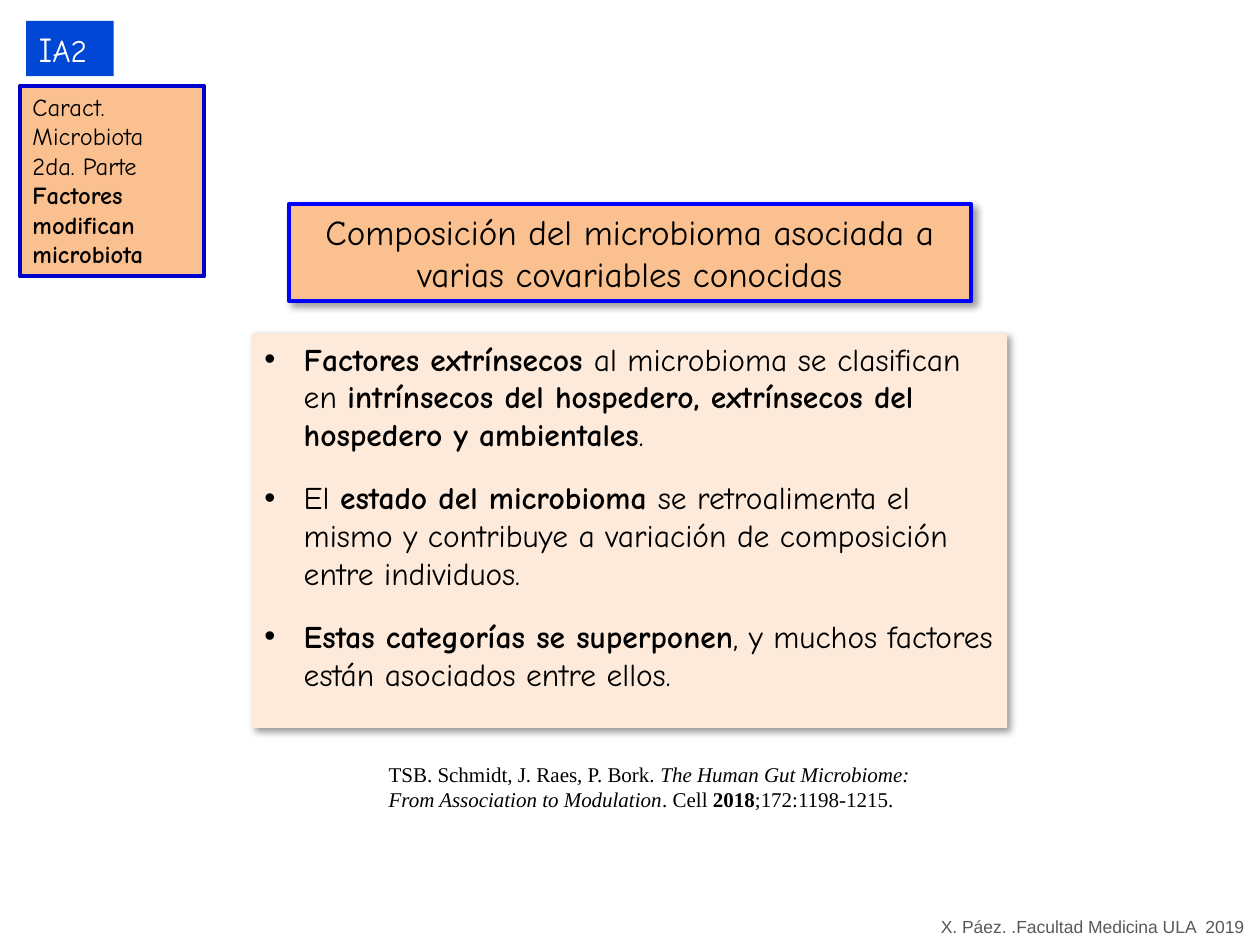
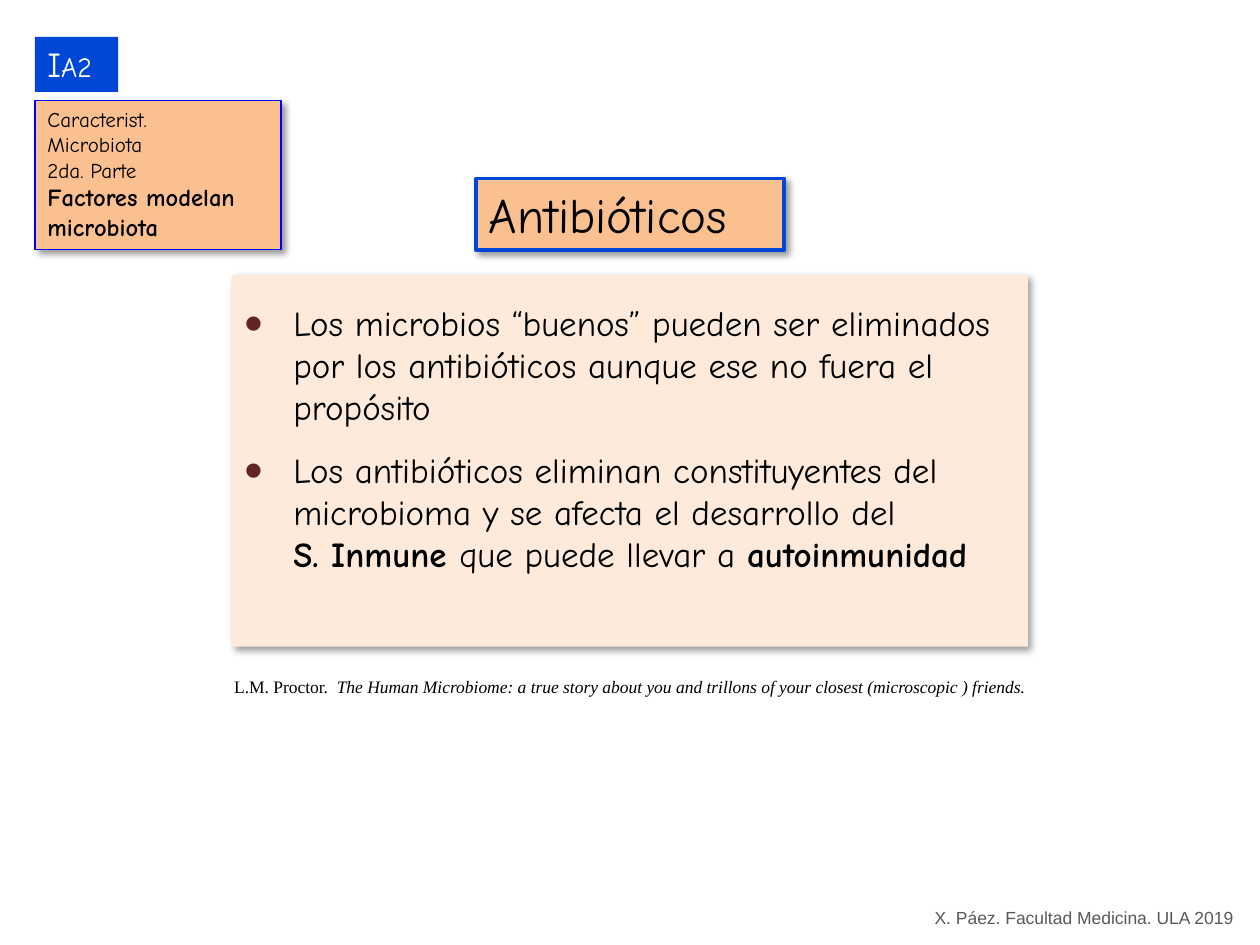
import pptx
import pptx.dml.color
import pptx.enum.shapes
import pptx.enum.text
import pptx.oxml
import pptx.oxml.ns
import pptx.util

Pt = pptx.util.Pt
ALIGN = pptx.enum.text.PP_ALIGN
ANCHOR = pptx.enum.text.MSO_ANCHOR
COLORS = {
    "black": "000000",
    "white": "FFFFFF",
    "gray": "595959",
    "peach": "FAC090",
    "cream": "FDEADA",
    "cobalt": "0047D6",
    "blue": "0000FF",
    "navy": "0000CC",
    "maroon": "632523",
}
LETTERING, CITING, FOOTING = "Comic Neue", "Times New Roman", "Arial"
BOLD = {"bold": True}
ITALIC = {"italic": True}


def rgb(name):
    return pptx.dml.color.RGBColor.from_string(COLORS[name])


def xml(markup):
    """Parse one DrawingML element, whose prefix is a."""
    tag, rest = markup[:-2].split(" ", 1)
    return pptx.oxml.parse_xml(f"{tag} {pptx.oxml.ns.nsdecls('a')} {rest}/>")


class Deck:
    """Holds the presentation, its shared style and the current slide."""

    def __init__(self):
        self.prs = pptx.Presentation()
        self.prs.slide_width, self.prs.slide_height = Pt(720), Pt(540)
        self.slide = None

    def start_slide(self):
        self.slide = self.prs.slides.add_slide(self.prs.slide_layouts[5])

    def place(self, shape, box):
        shape.left, shape.top, shape.width, shape.height = map(Pt, box)

    def decorate(self, shape, fill, line=None, weight=2.25, shadow=True):
        shape.fill.solid()
        shape.fill.fore_color.rgb = rgb(fill)
        if line:
            shape.line.color.rgb = rgb(line)
            shape.line.width = Pt(weight)
        else:
            shape.line.fill.background()
        shape.shadow.inherit = False
        if shadow:
            cast = xml(f'<a:outerShdw blurRad="{Pt(4)}" dist="{Pt(3)}" dir="2700000" '
                       'algn="tl" rotWithShape="0"/>')
            shade = xml(f'<a:srgbClr val="{COLORS["black"]}"/>')
            shade.append(xml('<a:alpha val="40000"/>'))
            cast.append(shade)
            effects = shape._element.spPr.find(pptx.oxml.ns.qn("a:effectLst"))
            effects.append(cast)

    def panel(self, box, fill, **look):
        panel = self.slide.shapes.add_shape(
            pptx.enum.shapes.MSO_SHAPE.RECTANGLE, *map(Pt, box))
        self.decorate(panel, fill, **look)
        return panel.text_frame

    def set_text(self, frame, paragraphs, size, font=LETTERING, color="black",
                 align=ALIGN.LEFT, anchor=ANCHOR.TOP, wrap=True, gap=0, bullet=None):
        """Fill a frame; a paragraph is a list of (text, font attributes) runs."""
        frame.word_wrap = wrap
        frame.auto_size = pptx.enum.text.MSO_AUTO_SIZE.NONE
        frame.vertical_anchor = anchor
        for index, runs in enumerate(paragraphs):
            paragraph = frame.add_paragraph() if index else frame.paragraphs[0]
            paragraph.alignment = align
            if index and gap:
                paragraph.space_before = Pt(gap)
            if bullet:
                self.add_bullet(paragraph, *bullet)
            paragraph.font.name = font
            paragraph.font.size = Pt(size)
            paragraph.font.color.rgb = rgb(color)
            for text, attributes in runs:
                if text == "\n":
                    paragraph.add_line_break()
                    continue
                run = paragraph.add_run()
                run.text = text
                for attribute, value in attributes.items():
                    setattr(run.font, attribute, value)

    def add_bullet(self, paragraph, indent, color, percent):
        properties = paragraph._p.get_or_add_pPr()
        properties.set("marL", str(Pt(indent)))
        properties.set("indent", str(-Pt(indent)))
        tint = pptx.oxml.parse_xml(f"<a:buClr {pptx.oxml.ns.nsdecls('a')}/>")
        tint.append(xml(f'<a:srgbClr val="{COLORS[color]}"/>'))
        properties.append(tint)
        properties.append(xml(f'<a:buSzPct val="{percent * 1000}"/>'))
        properties.append(xml('<a:buFont typeface="Arial"/>'))
        properties.append(xml('<a:buChar char="•"/>'))

    def title(self, box, text, size, line, align):
        title = self.slide.shapes.title
        self.place(title, box)
        self.decorate(title, "peach", line=line)
        self.set_text(title.text_frame, [[(text, {})]], size, align=align,
                      anchor=ANCHOR.MIDDLE)

    def badge(self, box, small_size):
        frame = self.panel(box, "cobalt", shadow=False)
        self.set_text(frame, [[("I", {}), ("A2", {"size": Pt(small_size)})]], 20,
                      color="white")

    def sidebar(self, box, paragraphs, size, **look):
        self.set_text(self.panel(box, "peach", **look), paragraphs, size)

    def body(self, box, paragraphs, size, gap, bullet, top_inset=3.6):
        frame = self.panel(box, "cream")
        frame.margin_top = Pt(top_inset)
        self.set_text(frame, paragraphs, size, gap=gap, bullet=bullet)

    def note(self, box, paragraphs, size, **style):
        frame = self.slide.shapes.add_textbox(*map(Pt, box)).text_frame
        self.set_text(frame, paragraphs, size, **style)

    def citation(self, box, paragraphs, size, align=ALIGN.LEFT):
        self.note(box, paragraphs, size, font=CITING, align=align)

    def footer(self, box, text):
        self.note(box, [[(text, {})]], 10, font=FOOTING, color="gray", wrap=False)


def covariates_slide(deck):
    deck.start_slide()
    deck.title((165, 116.5, 390, 55.5),
               "Composición del microbioma asociada a varias covariables conocidas",
               20, "blue", ALIGN.CENTER)
    deck.footer((530.5, 520, 189.5, 19.5), "X. Páez. .Facultad Medicina ULA  2019")
    deck.body((144, 190.5, 431.5, 225.5), [
        [("Factores extrínsecos ", BOLD),
         ("al microbioma se clasifican en ", {}),
         ("intrínsecos del hospedero, extrínsecos del hospedero y ambientales", BOLD),
         (".", {})],
        [("El ", {}), ("estado del microbioma ", BOLD),
         ("se retroalimenta el mismo y contribuye a variación de composición "
          "entre individuos.", {})],
        [("Estas categorías se superponen", BOLD),
         (", y muchos factores están asociados entre ellos.", {})],
    ], 18, gap=14.5, bullet=(22.5, "black", 100))
    deck.citation((215, 431.5, 316, 36), [
        [("TSB. Schmidt, J. Raes, P. Bork. ", {}), ("The Human Gut Microbiome:", ITALIC)],
        [("From Association to Modulation", ITALIC), (". Cell ", {}), ("2018", BOLD),
         (";172:1198-1215.", {})],
    ], 12)
    deck.badge((15, 12, 50, 31.5), 18)
    deck.sidebar((11.5, 49, 105, 109), [
        [("Caract.", {})],
        [("Microbiota", {})],
        [("2da. Parte", {})],
        [("Factores modifican microbiota", BOLD)],
    ], 14, line="navy", shadow=False)


def antibiotics_slide(deck):
    deck.start_slide()
    deck.title((272, 102, 176, 41), "Antibióticos", 28, "cobalt", ALIGN.LEFT)
    deck.body((132.5, 157, 455, 212.5), [
        [("Los microbios “buenos” pueden ser eliminados por los antibióticos "
          "aunque ese no fuera el propósito", {})],
        [("Los antibióticos eliminan constituyentes del microbioma y se afecta "
          "el desarrollo del", {}),
         ("\n", {}),
         ("S. Inmune ", BOLD), ("que puede llevar a ", {}), ("autoinmunidad", BOLD)],
    ], 20, gap=12, bullet=(28, "maroon", 150), top_inset=15.5)
    deck.footer((527, 515, 186.5, 19.5), "X. Páez. Facultad Medicina. ULA 2019")
    deck.citation((106.5, 382.5, 506.5, 19.5), [
        [("L.M. Proctor.  ", {}),
         ("The Human Microbiome: a true story about you and trillons of your "
          "closest (microscopic ) friends.", ITALIC)],
    ], 10, align=ALIGN.CENTER)
    emphasis = {"size": Pt(14), **BOLD}
    deck.sidebar((20, 57.5, 140.5, 85), [
        [("Caracterist.", {})],
        [("Microbiota", {})],
        [("2da. Parte", {})],
        [("Factores modelan", emphasis)],
        [("microbiota", emphasis)],
    ], 12, line="blue", weight=0.75)
    deck.badge((20, 21, 47.5, 31.5), 16)


def main():
    deck = Deck()
    covariates_slide(deck)
    antibiotics_slide(deck)
    deck.prs.save("out.pptx")


if __name__ == "__main__":
    main()
